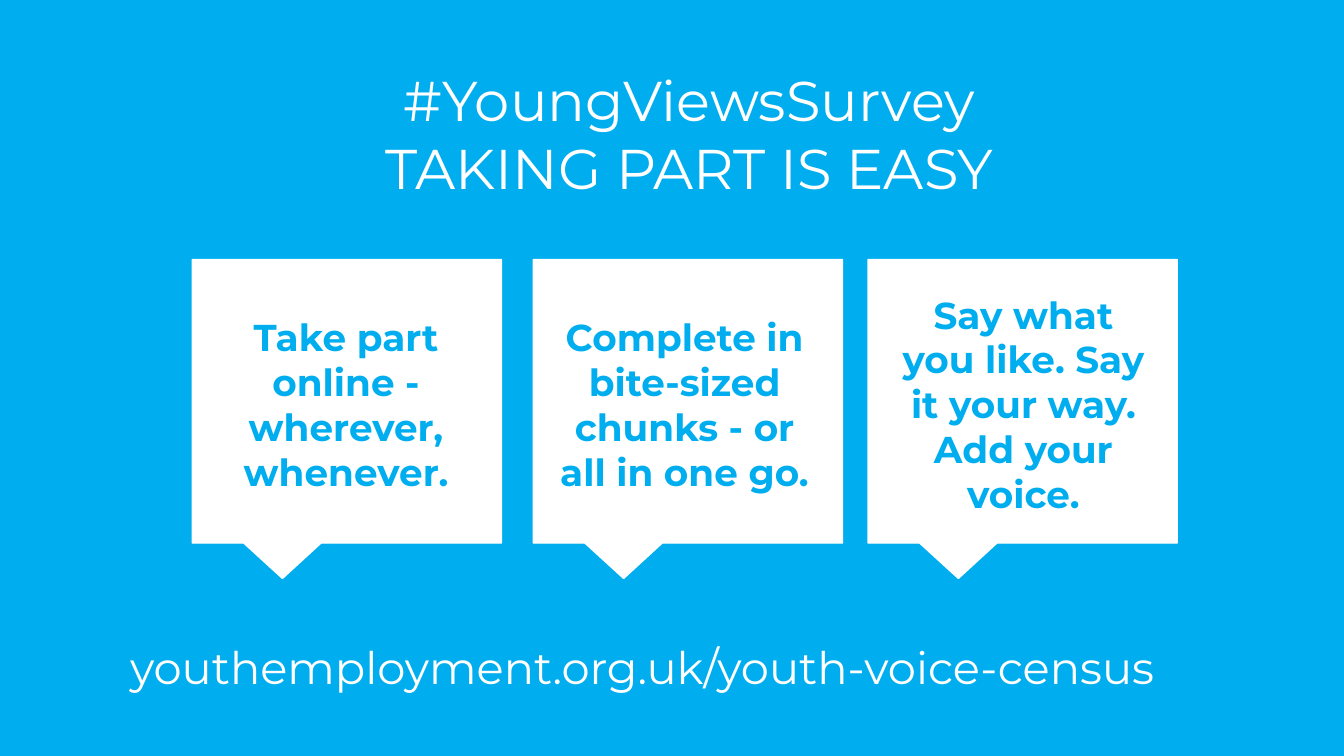
from dataclasses import dataclass

from pptx import Presentation
from pptx.dml.color import RGBColor
from pptx.enum import shapes, text
from pptx.util import Pt


@dataclass(frozen=True)
class Theme:
    sky: RGBColor = RGBColor(0x00, 0xAE, 0xEF)
    white: RGBColor = RGBColor(0xFF, 0xFF, 0xFF)
    font: str = "Montserrat"
    title_size: float = 30
    message_size: float = 20
    address_size: float = 24


THEME = Theme()
BUBBLE_TOP, BUBBLE_WIDTH, BUBBLE_HEIGHT = 139, 165.6, 151.9
MESSAGE_WIDTH, MESSAGE_CENTRE = 149, 217.1

# Bubble left, message left, message height, message
MESSAGES = [
    (103, 110.9, 111.6, "Take part online - wherever, whenever."),
    (285.8, 292.3, 111.6, "Complete in bite-sized chunks - or all in one go."),
    (465.1, 473.8, 136.1, "Say what you like. Say it your way. Add your voice."),
]


def write(shape, wording, size, color, align, bold=False):
    frame = shape.text_frame
    frame.word_wrap = True
    frame.vertical_anchor = text.MSO_ANCHOR.TOP
    frame.margin_left = frame.margin_right = Pt(7.2)
    frame.margin_top = frame.margin_bottom = Pt(7.2)
    frame.text = wording
    for paragraph in frame.paragraphs:
        paragraph.alignment = align
        for run in paragraph.runs:
            run.font.name = THEME.font
            run.font.size = Pt(size)
            run.font.bold = bold
            run.font.color.rgb = color


def add_label(slide, box, wording, size, align):
    label = slide.shapes.add_textbox(*map(Pt, box))
    write(label, wording, size, THEME.white, align)


def add_white_shape(slide, kind, box):
    shape = slide.shapes.add_shape(kind, *map(Pt, box))
    shape.shadow.inherit = False
    shape.fill.solid()
    shape.fill.fore_color.rgb = THEME.white
    return shape


def add_bubble(slide, left):
    bubble = add_white_shape(slide, shapes.MSO_SHAPE.RECTANGULAR_CALLOUT,
                             (left, BUBBLE_TOP, BUBBLE_WIDTH, BUBBLE_HEIGHT))
    bubble.adjustments[0] = -0.208
    bubble.adjustments[1] = 0.625
    bubble.line.color.rgb = THEME.white
    bubble.line.width = Pt(0.75)


def add_message(slide, left, height, wording):
    top = MESSAGE_CENTRE - height / 2
    message = add_white_shape(slide, shapes.MSO_SHAPE.RECTANGLE,
                              (left, top, MESSAGE_WIDTH, height))
    message.line.fill.background()
    write(message, wording, THEME.message_size, THEME.sky,
          text.PP_ALIGN.CENTER, bold=True)


def main():
    deck = Presentation()
    deck.slide_width, deck.slide_height = Pt(720), Pt(405)
    slide = deck.slides.add_slide(deck.slide_layouts[6])
    slide.background.fill.solid()
    slide.background.fill.fore_color.rgb = THEME.sky

    add_label(slide, (110.2, 28.1, 518.4, 87.1),
              "#YoungViewsSurvey\nTAKING PART IS EASY",
              THEME.title_size, text.PP_ALIGN.CENTER)
    for bubble_left, message_left, height, wording in MESSAGES:
        add_bubble(slide, bubble_left)
        add_message(slide, message_left, height, wording)
    add_label(slide, (62.6, 335.5, 616.3, 43.9),
              "youthemployment.org.uk/youth-voice-census",
              THEME.address_size, text.PP_ALIGN.LEFT)
    deck.save("out.pptx")


if __name__ == "__main__":
    main()
